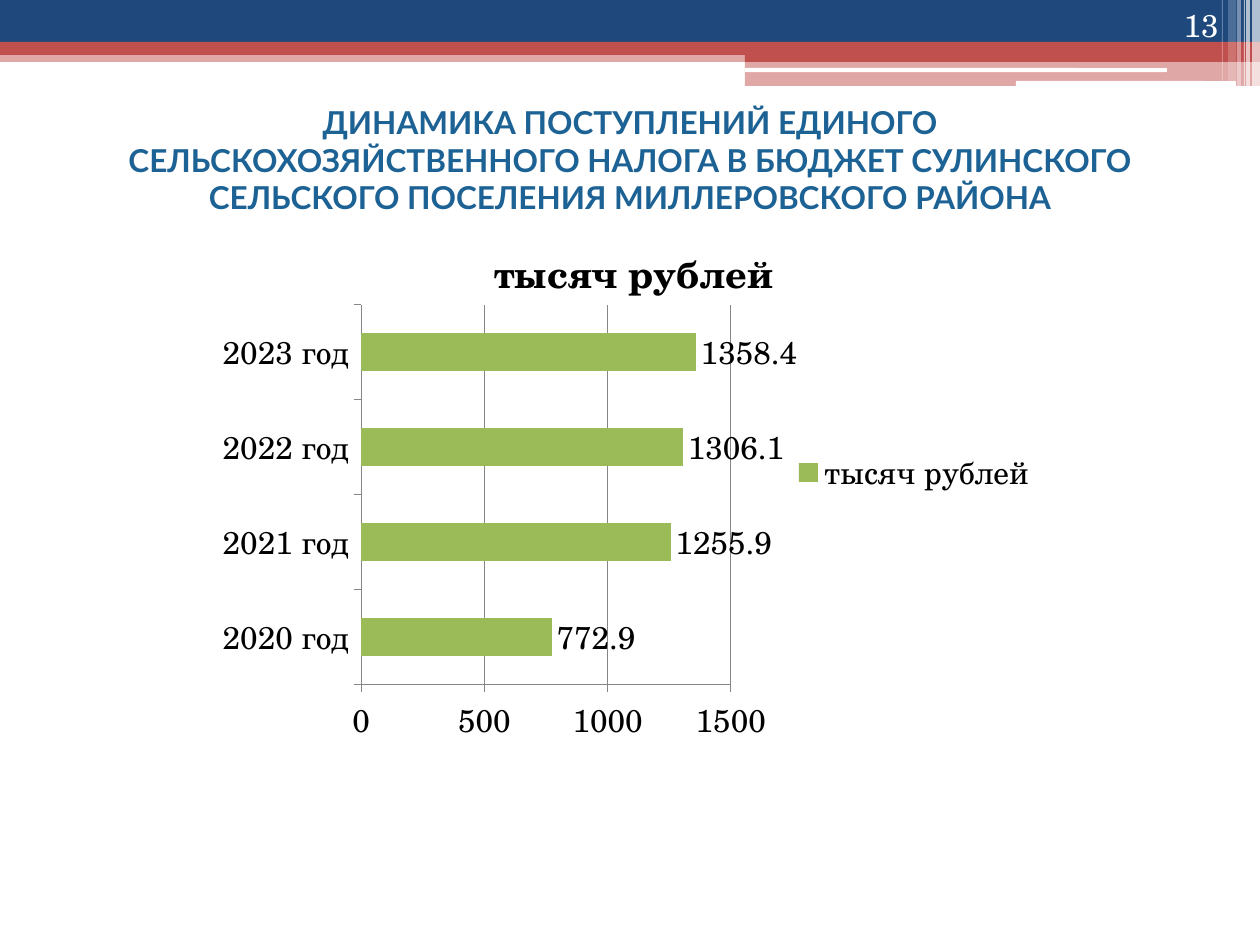
import pptx
import pptx.util
import pptx.chart.data
import pptx.dml.color
import pptx.enum.chart
import pptx.enum.shapes
import pptx.enum.text
import pptx.oxml
import pptx.oxml.ns

PX = 914400 / 126
COLORS = {
    "navy": "1F497D", "red": "C0504D", "white": "FFFFFF", "title": "1D6294",
    "bar": "9BBB59", "text": "000000", "grid": "868686",
}
SERIF = "TeX Gyre Schola"
ALIGN = pptx.enum.text.PP_ALIGN
ANCHOR = pptx.enum.text.MSO_ANCHOR
SHAPE = pptx.enum.shapes.MSO_SHAPE


def px(*values):
    return [pptx.util.Emu(round(v * PX)) for v in values]


def rgb(name):
    return pptx.dml.color.RGBColor.from_string(COLORS[name])


def set_font(font, color, size=18, name=SERIF, bold=False):
    font.size = pptx.util.Pt(size)
    font.name = name
    font.bold = bold
    font.color.rgb = rgb(color)


def write(tf, text, align=ALIGN.LEFT, anchor=ANCHOR.TOP, **font):
    tf.word_wrap = True
    tf.vertical_anchor = anchor
    p = tf.paragraphs[0]
    p.alignment = align
    r = p.add_run()
    r.text = text
    set_font(r.font, **font)


def add_bar(s, box, color, alpha=100, kind=SHAPE.RECTANGLE):
    sp = s.shapes.add_shape(kind, *px(*box))
    sp.shadow.inherit = False
    sp.line.fill.background()
    sp.fill.solid()
    sp.fill.fore_color.rgb = rgb(color)
    if alpha < 100:
        clr = sp.fill._xPr.find(".//" + pptx.oxml.ns.qn("a:srgbClr"))
        clr.append(pptx.oxml.parse_xml(
            f'<a:alpha {pptx.oxml.ns.nsdecls("a")} val="{alpha * 1000}"/>'))


def add_header(s, x, y, w):
    half = x + 745
    right = x + w
    add_bar(s, (x, y + 50, w, 12), "red", 50)
    add_bar(s, (x, y, w, 43), "navy")
    add_bar(s, (x, y + 42, w, 13), "red")
    add_bar(s, (half, y + 49, right - half, 13), "red")
    add_bar(s, (half, y + 61, right - half, 25), "red", 50)
    for box in ((half, y + 68, 422, 4), (x + 1016, y + 81, 220, 5)):
        add_bar(s, box, "white", kind=SHAPE.ROUNDED_RECTANGLE)
    stripes = ((8, 8, 86, 65), (14, 4, 86, 65), (16, 1, 86, 60),
               (23, 4, 86, 40), (32, 8, 81, 20), (38, 1, 81, 30))
    for offset, width, height, alpha in stripes:
        add_bar(s, (right - offset, y, width, height), "white", alpha)
    number = s.shapes.add_textbox(*px(right - 134, y, 105, 50))
    write(number.text_frame, "13", ALIGN.RIGHT, ANCHOR.BOTTOM, color="white")


def add_title(s, x, y, w, h):
    sp = s.shapes.title
    sp.left, sp.top, sp.width, sp.height = px(x, y, w, h)
    write(sp.text_frame,
          "ДИНАМИКА ПОСТУПЛЕНИЙ ЕДИНОГО СЕЛЬСКОХОЗЯЙСТВЕННОГО НАЛОГА В БЮДЖЕТ "
          "СУЛИНСКОГО СЕЛЬСКОГО ПОСЕЛЕНИЯ МИЛЛЕРОВСКОГО РАЙОНА",
          ALIGN.CENTER, ANCHOR.MIDDLE, color="title", name="Lato", bold=True)


def set_layout(parent, before, target="", **fractions):
    modes = "".join(f'<c:{k}Mode val="edge"/>' for k in "xy")
    values = "".join(f'<c:{k} val="{v}"/>' for k, v in fractions.items())
    for old in parent.findall(pptx.oxml.ns.qn("c:layout")):
        parent.remove(old)
    layout = pptx.oxml.parse_xml(
        f'<c:layout {pptx.oxml.ns.nsdecls("c")}><c:manualLayout>'
        f'{target}{modes}{values}</c:manualLayout></c:layout>')
    parent.find(pptx.oxml.ns.qn(before)).addprevious(layout)


def add_revenue_chart(s, x, y, w, h):
    data = pptx.chart.data.CategoryChartData()
    data.categories = [f"{year} год" for year in range(2020, 2024)]
    data.add_series("тысяч рублей", (772.9, 1255.9, 1306.1, 1358.4))
    kind = pptx.enum.chart.XL_CHART_TYPE.BAR_CLUSTERED
    chart = s.shapes.add_chart(kind, *px(x, y, w, h), data).chart
    set_font(chart.font, "text")

    chart.has_title = True
    write(chart.chart_title.text_frame, "тысяч рублей", ALIGN.CENTER,
          color="text", size=21.6, bold=True)
    set_layout(chart.chart_title._element, "c:overlay", x=0.33, y=0.07)

    chart.has_legend = True
    chart.legend.position = pptx.enum.chart.XL_LEGEND_POSITION.RIGHT
    chart.legend.include_in_layout = False

    plot = chart.plots[0]
    plot.gap_width = 150
    plot.vary_by_categories = False
    plot.has_data_labels = True
    plot.data_labels.show_value = True
    plot.data_labels.position = pptx.enum.chart.XL_LABEL_POSITION.OUTSIDE_END
    fill = plot.series[0].format.fill
    fill.solid()
    fill.fore_color.rgb = rgb("bar")

    values = chart.value_axis
    values.minimum_scale, values.maximum_scale, values.major_unit = 0, 1500, 500
    values.has_major_gridlines = True
    lines = [values.major_gridlines.format.line]
    for axis in (values, chart.category_axis):
        axis.major_tick_mark = pptx.enum.chart.XL_TICK_MARK.OUTSIDE
        lines.append(axis.format.line)
    for line in lines:
        line.color.rgb = rgb("grid")
        line.width = pptx.util.Pt(0.75)
    set_layout(chart._chartSpace.chart.plotArea, "c:barChart",
               '<c:layoutTarget val="inner"/>', x=0.18, y=0.2, w=0.44, h=0.68)


def main():
    prs = pptx.Presentation()
    prs.slide_width, prs.slide_height = px(1260, 945)
    s = prs.slides.add_slide(prs.slide_layouts[5])
    add_header(s, 0, 0, 1260)
    add_title(s, 84, 96, 1092, 127)
    add_revenue_chart(s, 210, 193, 840, 559)
    prs.save("out.pptx")


if __name__ == "__main__":
    main()
